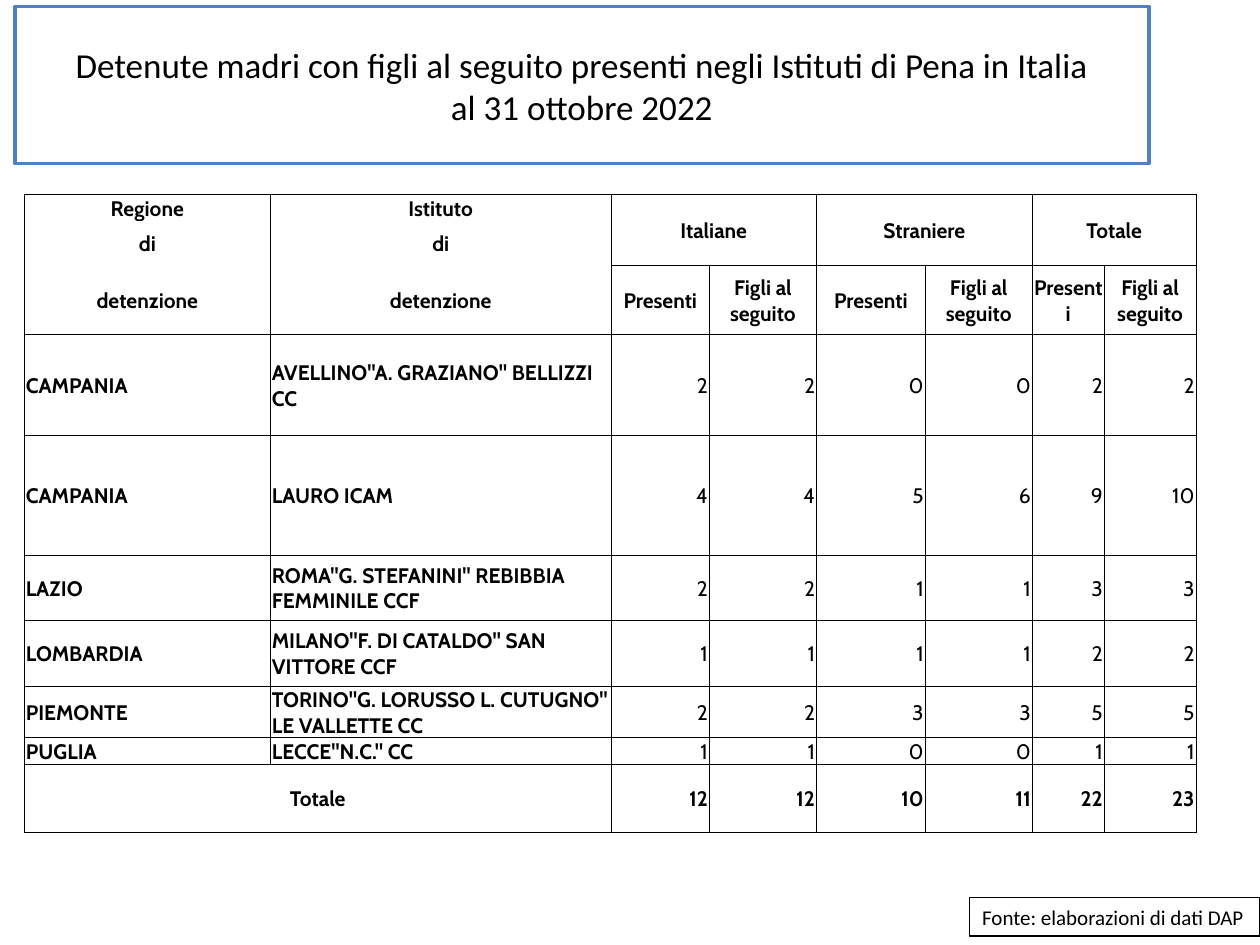
import dataclasses
import typing

import lxml.etree
import pptx
import pptx.dml.color
import pptx.enum.shapes
import pptx.enum.text
import pptx.oxml.ns
import pptx.util

Cm = pptx.util.Cm
Pt = pptx.util.Pt
ALIGN = pptx.enum.text.PP_ALIGN
ANCHOR = pptx.enum.text.MSO_ANCHOR


@dataclasses.dataclass(frozen=True)
class Theme:
    white: str = "FFFFFF"
    black: str = "000000"
    blue: str = "4F81BD"
    title_font: str = "Calibri"
    table_font: str = "Cabin"
    title_size: float = 20
    body_size: float = 12
    border_width: float = 0.5


THEME = Theme()


class Institute(typing.NamedTuple):
    region: str
    name: str
    italian_mothers: int
    italian_children: int
    foreign_mothers: int
    foreign_children: int

    def counts(self) -> list[int]:
        """The four counts, followed by the totals of mothers and children."""
        return [*self[2:], self.italian_mothers + self.foreign_mothers,
                self.italian_children + self.foreign_children]


INSTITUTES = [
    Institute("CAMPANIA", 'AVELLINO"A. GRAZIANO" BELLIZZI CC', 2, 2, 0, 0),
    Institute("CAMPANIA", "LAURO ICAM", 4, 4, 5, 6),
    Institute("LAZIO", 'ROMA"G. STEFANINI" REBIBBIA FEMMINILE CCF', 2, 2, 1, 1),
    Institute("LOMBARDIA", 'MILANO"F. DI CATALDO" SAN VITTORE CCF', 1, 1, 1, 1),
    Institute("PIEMONTE", 'TORINO"G. LORUSSO L. CUTUGNO" LE VALLETTE CC', 2, 2, 3, 3),
    Institute("PUGLIA", 'LECCE"N.C." CC', 1, 1, 0, 0),
]
GROUPS = ["Italiane", "Straniere", "Totale"]
HEADER_ROWS = 3
COLUMN_WIDTHS = [4.96, 6.87, 1.98, 2.16, 2.19, 2.16, 1.45, 1.85]
ROW_HEIGHTS = [0.46, 0.89, 1.4, 2.03, 2.41, 1.32, 1.32, 0.86, 0.46, 1.37]


def rgb(color: str) -> pptx.dml.color.RGBColor:
    return pptx.dml.color.RGBColor.from_string(color)


def format_text(text_frame, font_name: str, size: float, align, bold: bool = False) -> None:
    for paragraph in text_frame.paragraphs:
        paragraph.alignment = align
        for font in [paragraph.font, *(run.font for run in paragraph.runs)]:
            font.name = font_name
            font.size = Pt(size)
            font.bold = bold
            font.color.rgb = rgb(THEME.black)


def format_box(shape, line_color: str, line_width: float) -> None:
    shape.fill.solid()
    shape.fill.fore_color.rgb = rgb(THEME.white)
    shape.line.color.rgb = rgb(line_color)
    shape.line.width = Pt(line_width)


def set_borders(cell, sides: str) -> None:
    """Draw the named sides (from "LRTB") in black and hide the others."""
    properties = cell._tc.get_or_add_tcPr()
    qn = pptx.oxml.ns.qn
    for side in "LRTB":
        line = lxml.etree.SubElement(properties, qn(f"a:ln{side}"), w=str(Pt(THEME.border_width)))
        if side in sides:
            fill = lxml.etree.SubElement(line, qn("a:solidFill"))
            lxml.etree.SubElement(fill, qn("a:srgbClr"), val=THEME.black)
        else:
            lxml.etree.SubElement(line, qn("a:noFill"))


def write_cell(cell, text: str, align=ALIGN.CENTER, bold: bool = True) -> None:
    cell.text_frame.text = text
    format_text(cell.text_frame, THEME.table_font, THEME.body_size, align, bold)


def style_cells(table) -> None:
    """Give every cell its margins, borders and fill; the stacked headers have no inner rules."""
    for row_index, row in enumerate(table.rows):
        for column_index, cell in enumerate(row.cells):
            sides = "LRTB"
            if column_index < 2 and row_index < HEADER_ROWS:
                sides = ["LRT", "LR", "LRB"][row_index]
            set_borders(cell, sides)
            cell.fill.solid()
            cell.fill.fore_color.rgb = rgb(THEME.white)
            cell.vertical_anchor = ANCHOR.MIDDLE
            cell.margin_left = cell.margin_right = cell.margin_top = Cm(0.03)
            cell.margin_bottom = 0
            write_cell(cell, "")


def fill_headers(table) -> None:
    for column, heading in enumerate(["Regione", "Istituto"]):
        for row, word in enumerate([heading, "di", "detenzione"]):
            write_cell(table.cell(row, column), word)
    for index, group in enumerate(GROUPS):
        column = 2 + 2 * index
        table.cell(0, column).merge(table.cell(1, column + 1))
        write_cell(table.cell(0, column), group)
        write_cell(table.cell(2, column), "Presenti")
        write_cell(table.cell(2, column + 1), "Figli al seguito")


def write_counts(table, row: int, counts: list[int], bold: bool) -> None:
    for column, count in enumerate(counts, start=2):
        write_cell(table.cell(row, column), str(count), ALIGN.RIGHT, bold)


def add_institutes_table(slide) -> None:
    table = slide.shapes.add_table(
        len(ROW_HEIGHTS), len(COLUMN_WIDTHS), Cm(0.49), Cm(3.92),
        Cm(sum(COLUMN_WIDTHS)), Cm(sum(ROW_HEIGHTS))).table
    table.first_row = False
    table.horz_banding = False
    for column, width in zip(table.columns, COLUMN_WIDTHS):
        column.width = Cm(width)
    for row, height in zip(table.rows, ROW_HEIGHTS):
        row.height = Cm(height)
    style_cells(table)
    fill_headers(table)

    for row, institute in enumerate(INSTITUTES, start=HEADER_ROWS):
        write_cell(table.cell(row, 0), institute.region, ALIGN.LEFT)
        write_cell(table.cell(row, 1), institute.name, ALIGN.LEFT)
        write_counts(table, row, institute.counts(), bold=False)

    total_row = HEADER_ROWS + len(INSTITUTES)
    table.cell(total_row, 0).merge(table.cell(total_row, 1))
    write_cell(table.cell(total_row, 0), "Totale")
    totals = [sum(column) for column in zip(*(item.counts() for item in INSTITUTES))]
    write_counts(table, total_row, totals, bold=True)


def format_title(title) -> None:
    title.left, title.top, title.width, title.height = Cm(0.3), Cm(0.13), Cm(22.86), Cm(3.17)
    format_box(title, THEME.blue, 2)
    title.text_frame.text = (
        "Detenute madri con figli al seguito presenti negli Istituti di Pena in Italia"
        "\val 31 ottobre 2022")
    title.text_frame.auto_size = pptx.enum.text.MSO_AUTO_SIZE.NONE
    title.text_frame.vertical_anchor = ANCHOR.MIDDLE
    format_text(title.text_frame, THEME.title_font, THEME.title_size, ALIGN.CENTER)


def add_source_note(slide) -> None:
    note = slide.shapes.add_textbox(Cm(19.55), Cm(18.1), Cm(5.85), Cm(0.77))
    format_box(note, THEME.black, 0.75)
    note.text_frame.text = "Fonte: elaborazioni di dati DAP"
    note.text_frame.word_wrap = False
    note.text_frame.auto_size = pptx.enum.text.MSO_AUTO_SIZE.SHAPE_TO_FIT_TEXT
    format_text(note.text_frame, THEME.title_font, THEME.body_size, ALIGN.LEFT)


def main() -> None:
    presentation = pptx.Presentation()
    presentation.slide_width = Cm(25.4)
    presentation.slide_height = Cm(19.05)
    slide = presentation.slides.add_slide(presentation.slide_layouts.get_by_name("Title Only"))
    format_title(slide.shapes.title)
    add_source_note(slide)
    add_institutes_table(slide)
    presentation.save("out.pptx")


if __name__ == "__main__":
    main()
